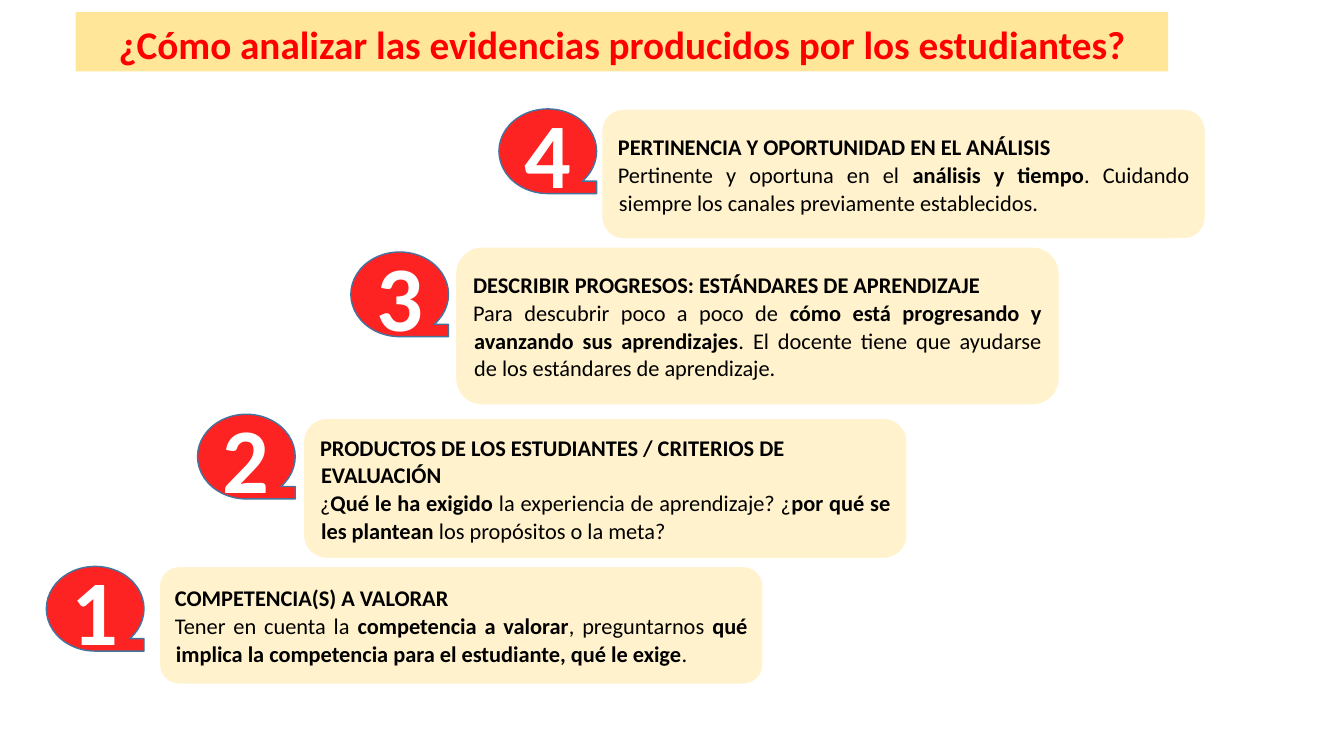
from pptx import Presentation
from pptx.dml.color import RGBColor
from pptx.enum.shapes import MSO_SHAPE
from pptx.enum.text import MSO_ANCHOR, MSO_AUTO_SIZE, PP_ALIGN
from pptx.util import Pt

# Content
TITLE = "¿Cómo analizar las evidencias producidos por los estudiantes?"
# Each step: heading, heading alignment, body runs (regular and bold in turn),
# card (left, top, height), badge (left, top)
STEPS = [
    ("COMPETENCIA(S) A VALORAR", PP_ALIGN.JUSTIFY,
     ["Tener en cuenta la ", "competencia a valorar", ", preguntarnos ",
      "qué implica la competencia para el estudiante, qué le exige", "."],
     (113.8, 404.6, 84.2), (33.1, 404.6)),
    ("PRODUCTOS DE LOS ESTUDIANTES / CRITERIOS DE EVALUACIÓN", PP_ALIGN.LEFT,
     ["¿", "Qué le ha exigido ", "la experiencia de aprendizaje? ¿",
      "por qué se les plantean", " los propósitos o la meta?"],
     (216.7, 298.8, 100.1), (141.1, 295.9)),
    ("DESCRIBIR PROGRESOS: ESTÁNDARES DE APRENDIZAJE", PP_ALIGN.JUSTIFY,
     ["Para descubrir poco a poco de ",
      "cómo está progresando y avanzando sus aprendizajes",
      ". El docente tiene que ayudarse de los estándares de aprendizaje."],
     (325.4, 176.4, 113), (250.6, 180)),
    ("PERTINENCIA Y OPORTUNIDAD EN EL ANÁLISIS", PP_ALIGN.JUSTIFY,
     ["Pertinente y oportuna en el ", "análisis y tiempo",
      ". Cuidando siempre los canales previamente establecidos."],
     (429.8, 77.8, 92.9), (356.4, 77.8)),
]

# Style
FONT = "Calibri"
CARD_WIDTH = 431.3
BADGE_WIDTH, BADGE_HEIGHT = 69.8, 60.5
TITLE_INSET = Pt(9.4)
WHITE = RGBColor(0xFF, 0xFF, 0xFF)
BLACK = RGBColor(0, 0, 0)
CREAM = RGBColor(0xFF, 0xF2, 0xCC)
GOLD = RGBColor(0xFF, 0xE6, 0x99)
TITLE_RED = RGBColor(0xFF, 0, 0)
BADGE_RED = RGBColor(0xFD, 0x23, 0x23)
BADGE_LINE = RGBColor(0x43, 0x73, 0x9E)


def set_font(paragraph, size, color, bold=None):
    paragraph.font.name = FONT
    paragraph.font.size = Pt(size)
    paragraph.font.color.rgb = color
    paragraph.font.bold = bold


def add_box(slide, kind, left, top, width, height, fill, line):
    shape = slide.shapes.add_shape(kind, Pt(left), Pt(top), Pt(width), Pt(height))
    shape.shadow.inherit = False
    shape.fill.solid()
    shape.fill.fore_color.rgb = fill
    shape.line.color.rgb = line
    shape.line.width = Pt(1)
    shape.text_frame.word_wrap = True
    shape.text_frame.vertical_anchor = MSO_ANCHOR.MIDDLE
    return shape


def format_card_paragraph(paragraph, alignment, bold=None):
    set_font(paragraph, 16, BLACK, bold)
    paragraph.alignment = alignment
    paragraph.line_spacing = 1.03
    paragraph.space_after = Pt(0.2)
    # Small hanging indent
    properties = paragraph._p.get_or_add_pPr()
    properties.set("marL", str(Pt(0.7)))
    properties.set("indent", str(Pt(-0.7)))


def add_card(slide, heading, alignment, body, left, top, height):
    card = add_box(slide, MSO_SHAPE.ROUNDED_RECTANGLE, left, top,
                   CARD_WIDTH, height, CREAM, WHITE)
    heading_paragraph = card.text_frame.paragraphs[0]
    heading_paragraph.text = heading
    format_card_paragraph(heading_paragraph, alignment, True)
    body_paragraph = card.text_frame.add_paragraph()
    format_card_paragraph(body_paragraph, PP_ALIGN.JUSTIFY)
    for index, text in enumerate(body):
        run = body_paragraph.add_run()
        run.text = text
        run.font.bold = index % 2 == 1


def add_badge(slide, number, left, top):
    badge = add_box(slide, MSO_SHAPE.FLOWCHART_SEQUENTIAL_ACCESS_STORAGE, left, top,
                    BADGE_WIDTH, BADGE_HEIGHT, BADGE_RED, BADGE_LINE)
    paragraph = badge.text_frame.paragraphs[0]
    paragraph.text = str(number)
    paragraph.alignment = PP_ALIGN.CENTER
    set_font(paragraph, 66, WHITE, True)


def add_title(slide):
    title = slide.shapes.title
    title.left, title.top, title.width, title.height = Pt(54), Pt(8.6), Pt(780.5), Pt(42.5)
    title.fill.solid()
    title.fill.fore_color.rgb = GOLD
    frame = title.text_frame
    frame.text = TITLE
    frame.word_wrap = True
    frame.auto_size = MSO_AUTO_SIZE.NONE
    frame.vertical_anchor = MSO_ANCHOR.TOP
    frame.margin_left = frame.margin_right = TITLE_INSET
    frame.margin_top = frame.margin_bottom = TITLE_INSET
    paragraph = frame.paragraphs[0]
    paragraph.alignment = PP_ALIGN.CENTER
    paragraph.line_spacing = 0.9
    set_font(paragraph, 28, TITLE_RED, True)


def main():
    presentation = Presentation()
    presentation.slide_width, presentation.slide_height = Pt(960), Pt(540)
    slide = presentation.slides.add_slide(presentation.slide_layouts[5])
    add_title(slide)

    # Staircase of steps, from the bottom up
    for number, (heading, alignment, body, card, badge) in enumerate(STEPS, 1):
        add_card(slide, heading, alignment, body, *card)
        add_badge(slide, number, *badge)

    presentation.save("out.pptx")


if __name__ == "__main__":
    main()
